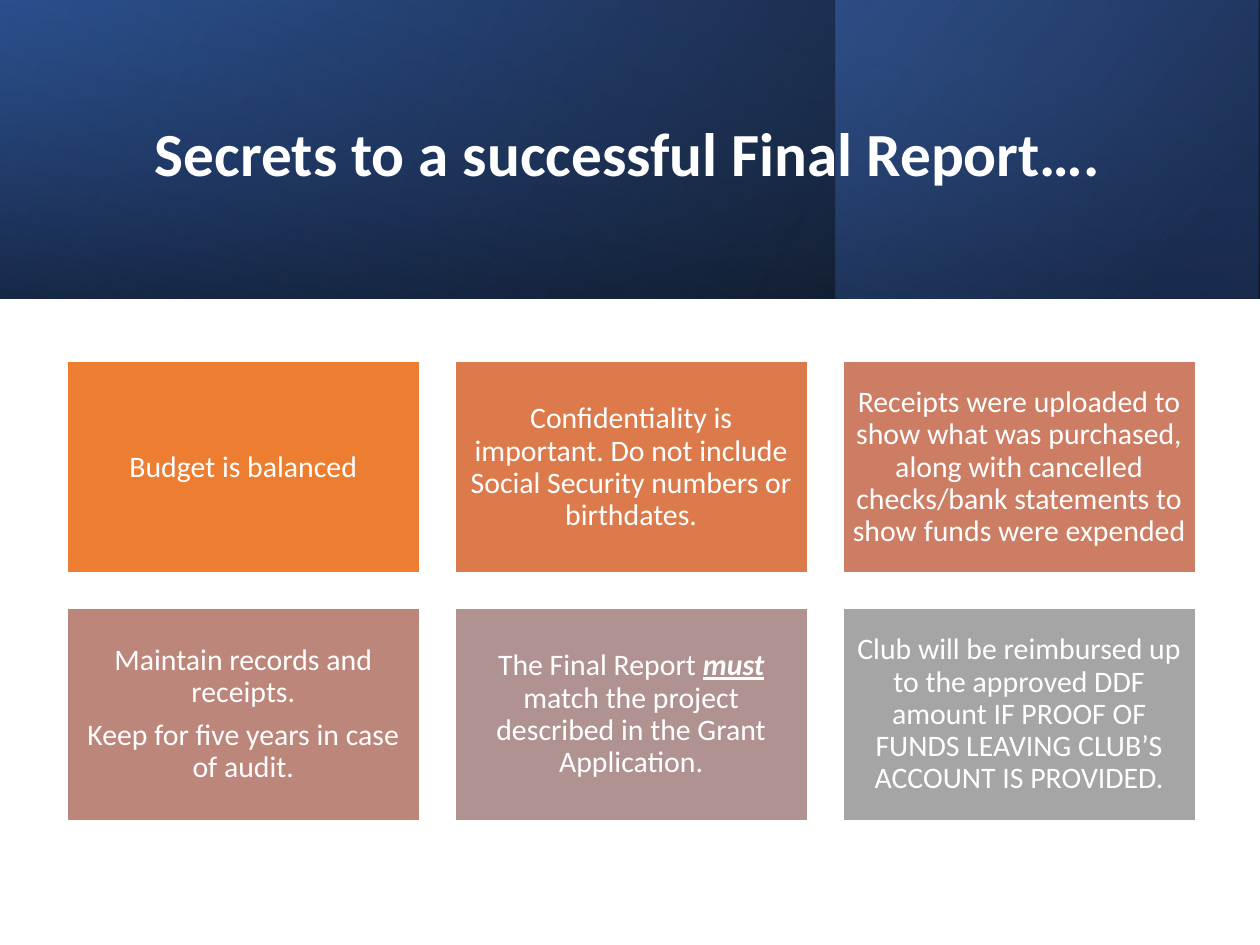
from lxml import etree
from pptx import Presentation
from pptx.dml.color import RGBColor
from pptx.enum.shapes import MSO_SHAPE
from pptx.enum.text import MSO_ANCHOR, MSO_AUTO_SIZE, PP_ALIGN
from pptx.oxml.ns import qn
from pptx.util import Cm, Pt

RECTANGLE = MSO_SHAPE.RECTANGLE
MIDDLE = MSO_ANCHOR.MIDDLE
NO_AUTOFIT = MSO_AUTO_SIZE.NONE
LEFT, CENTER = PP_ALIGN.LEFT, PP_ALIGN.CENTER
FONT = "Calibri"
WHITE = "FFFFFF"


def color(hex_text):
    return RGBColor.from_string(hex_text)


def set_gradient(shape, stops, angle):
    shape.fill.gradient()
    gradient = shape._element.spPr.find(qn("a:gradFill"))
    gradient.set("rotWithShape", "1")
    for child in list(gradient):
        gradient.remove(child)
    stop_list = etree.SubElement(gradient, qn("a:gsLst"))
    for position, hex_text, opacity in stops:
        stop = etree.SubElement(stop_list, qn("a:gs"), pos=str(position * 1000))
        tint = etree.SubElement(stop, qn("a:srgbClr"), val=hex_text)
        if opacity < 100:
            etree.SubElement(tint, qn("a:alpha"), val=str(opacity * 1000))
    etree.SubElement(gradient, qn("a:lin"), ang=str(angle * 60000), scaled="0")


deck = Presentation()
deck.slide_width, deck.slide_height = Cm(25.4), Cm(19.05)
page = deck.slides.add_slide(deck.slide_layouts[5])

banner_layers = [
    (0, 0, 25.4, 6.02, 0, [(0, "000000", 96), (100, "2F5597", 100)], 330),
    (16.84, 0, 8.53, 6.02, 0, [(19, "203864", 68), (100, "4472C4", 48)], 320),
    (9.69, -9.69, 6.02, 25.4, 270, [(23, "2F5597", 16), (99, "000000", 45)], 350),
]
for left, top, width, height, rotation, stops, angle in banner_layers:
    layer = page.shapes.add_shape(RECTANGLE, Cm(left), Cm(top), Cm(width), Cm(height))
    layer.shadow.inherit = False
    layer.line.fill.background()
    layer.rotation = rotation
    layer._element.spPr.find(qn("a:xfrm")).set("flipH", "1")
    set_gradient(layer, stops, angle)

title = page.shapes.title
page.shapes._spTree.append(title._element)
title.left, title.top, title.width, title.height = Cm(2.87), Cm(0.97), Cm(20.24), Cm(4.37)
title.text_frame.text = "Secrets to a successful Final Report…."
title.text_frame.vertical_anchor = MIDDLE
title.text_frame.auto_size = NO_AUTOFIT
title.text_frame.word_wrap = True
para = title.text_frame.paragraphs[0]
para.alignment = LEFT
para.line_spacing = 0.9
para.font.name = FONT
para.font.size = Pt(35)
para.font.bold = True
para.font.color.rgb = color(WHITE)

EMPHASIS = "must"
cards = [
    ("ED7D31", [["Budget is balanced"]]),
    ("DC7A4B", [["Confidentiality is important. Do not include Social Security numbers or birthdates."]]),
    ("CC7D64", [["Receipts were uploaded to show what was purchased, along with cancelled "
                 "checks/bank statements to show funds were expended"]]),
    ("BD867B", [["Maintain records and receipts."], ["Keep for five years in case of audit."]]),
    ("B09391", [["The Final Report ", EMPHASIS, " match the project described in the Grant Application."]]),
    ("A5A5A5", [["Club will be reimbursed up to the approved DDF amount IF PROOF OF FUNDS "
                 "LEAVING CLUB’S ACCOUNT IS PROVIDED."]]),
]
COLUMNS = 3
for index, (fill, paragraphs) in enumerate(cards):
    row, column = divmod(index, COLUMNS)
    box = page.shapes.add_shape(
        RECTANGLE, Cm(1.35 + 7.82 * column), Cm(7.29 + 4.98 * row), Cm(7.11), Cm(4.27))
    box.shadow.inherit = False
    box.fill.solid()
    box.fill.fore_color.rgb = color(fill)
    box.line.color.rgb = color(WHITE)
    box.line.width = Pt(1)
    frame = box.text_frame
    frame.word_wrap = True
    frame.vertical_anchor = MIDDLE
    frame.margin_left = frame.margin_right = Cm(0.18)
    frame.margin_top = frame.margin_bottom = Cm(0.18)
    for number, spans in enumerate(paragraphs):
        para = frame.add_paragraph() if number else frame.paragraphs[0]
        para.alignment = CENTER
        para.line_spacing = 0.9
        para.space_after = Pt(6)
        for text in spans:
            span = para.add_run()
            span.text = text
            span.font.name = FONT
            span.font.size = Pt(17)
            span.font.color.rgb = color(WHITE)
            if text == EMPHASIS:
                span.font.bold = span.font.italic = span.font.underline = True

deck.save("out.pptx")
